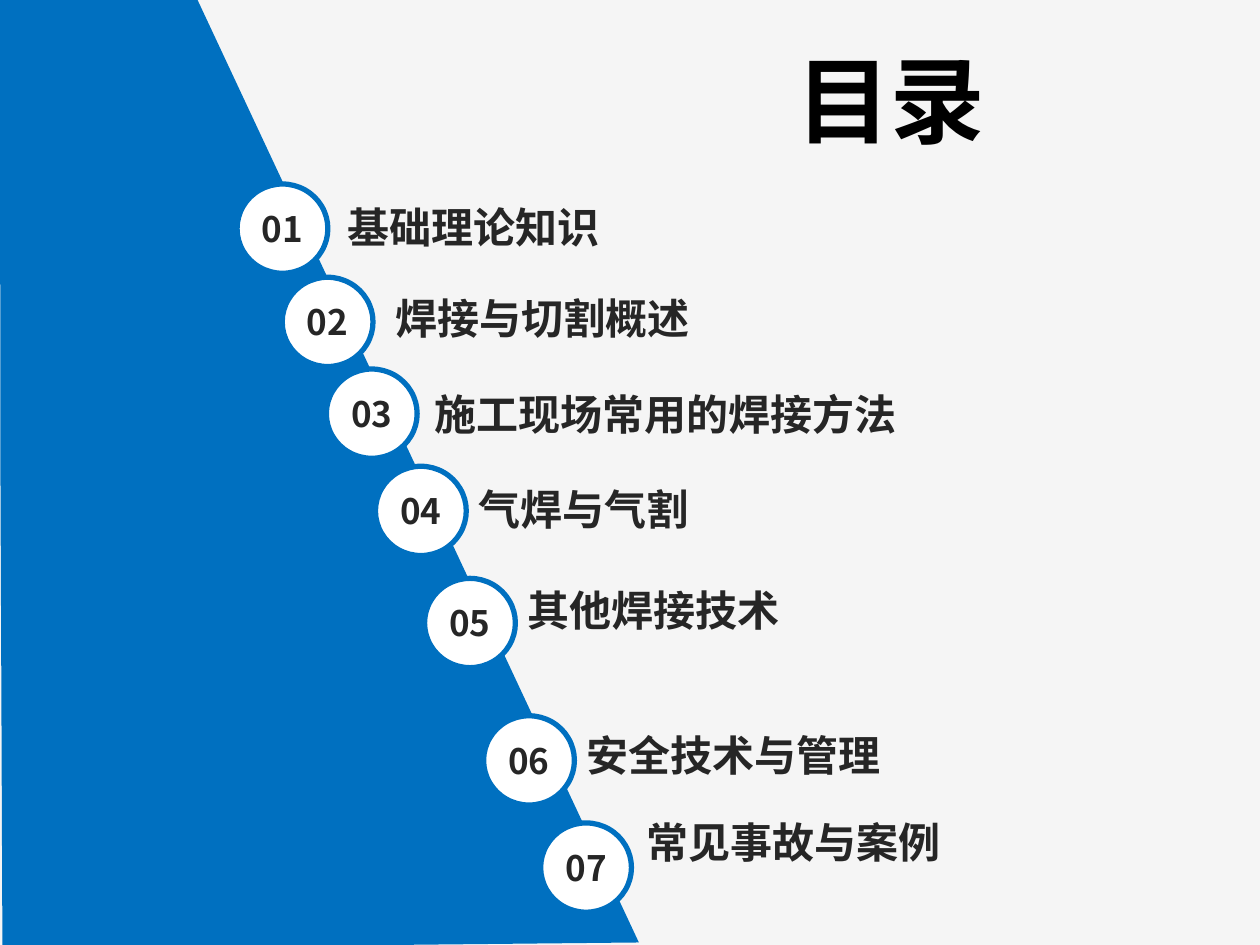
"""Build the contents slide: seven numbered chapters along a slanted blue panel."""
from lxml import etree
from pptx import Presentation
from pptx import util as u
from pptx.dml.color import RGBColor
from pptx.enum import shapes, text
from pptx.oxml.ns import qn

BLUE = RGBColor(0x00, 0x70, 0xC0)
PALE = RGBColor(0xF5, 0xF5, 0xF5)
WHITE = RGBColor(0xFF, 0xFF, 0xFF)
BLACK = RGBColor(0x00, 0x00, 0x00)
DARK = RGBColor(0x26, 0x26, 0x26)
SANS = "Noto Sans CJK SC"


def write(frame, words, size, typeface, color, align):
    frame.word_wrap = True
    paragraph = frame.paragraphs[0]
    paragraph.text = words
    paragraph.alignment = align
    font = paragraph.font
    font.size, font.bold, font.name = u.Pt(size), True, typeface
    font.color.rgb = color
    defaults = paragraph._p.pPr.find(qn("a:defRPr"))
    etree.SubElement(defaults, qn("a:ea"), typeface=SANS)


deck = Presentation()
deck.slide_width, deck.slide_height = u.Cm(25.4), u.Cm(19.05)
slide = deck.slides.add_slide(deck.slide_layouts[5])
slide.background.fill.solid()
slide.background.fill.fore_color.rgb = PALE

outline = [(12.88, 19), (3.96, -0.05), (0, -0.05), (0.01, 9.53), (0.05, 19.13)]
points = [(u.Cm(x), u.Cm(y)) for x, y in outline]
builder = slide.shapes.build_freeform(*points[0], scale=1.0)
builder.add_line_segments(points[1:], close=True)
panel = builder.convert_to_shape()
panel.shadow.inherit = False
panel.fill.solid()
panel.fill.fore_color.rgb = BLUE
panel.line.fill.background()

title = slide.shapes.title
title.left, title.top, title.width, title.height = u.Cm(12.12), u.Cm(0.71), u.Cm(11.68), u.Cm(2.54)
write(title.text_frame, "目录", 54, "Times New Roman", BLACK, text.PP_ALIGN.CENTER)

chapters = [
    ("基础理论知识", SANS, (4.78, 3.71), (6.76, 3.94, 15.52)),
    ("焊接与切割概述", "Calibri", (5.69, 5.59), (7.72, 5.77, 14.53)),
    ("施工现场常用的焊接方法", "Calibri", (6.58, 7.44), (8.51, 7.7, 13.77)),
    ("气焊与气割", SANS, (7.57, 9.4), (9.4, 9.63, 12.88)),
    ("其他焊接技术", SANS, (8.56, 11.66), (10.39, 11.66, 11.91)),
    ("安全技术与管理", SANS, (9.75, 14.43), (11.58, 14.58, 11.02)),
    ("常见事故与案例", SANS, (10.9, 16.59), (12.78, 16.33, 11.02)),
]
for number, (name, typeface, (x, y), (left, top, width)) in enumerate(chapters, 1):
    badge = slide.shapes.add_shape(
        shapes.MSO_SHAPE.OVAL, u.Cm(x), u.Cm(y), u.Cm(1.83), u.Cm(1.8))
    badge.shadow.inherit = False
    badge.fill.solid()
    badge.fill.fore_color.rgb = WHITE
    badge.line.color.rgb = BLUE
    badge.line.width = u.Pt(3)
    digits = badge.text_frame
    digits.margin_left = digits.margin_right = digits.margin_top = digits.margin_bottom = 0
    digits.vertical_anchor = text.MSO_ANCHOR.MIDDLE
    write(digits, f"{number:02d}", 20, SANS, DARK, text.PP_ALIGN.CENTER)

    heading = slide.shapes.add_textbox(u.Cm(left), u.Cm(top), u.Cm(width), u.Cm(1.27))
    write(heading.text_frame, name, 24, typeface, DARK, text.PP_ALIGN.LEFT)

deck.save("out.pptx")
